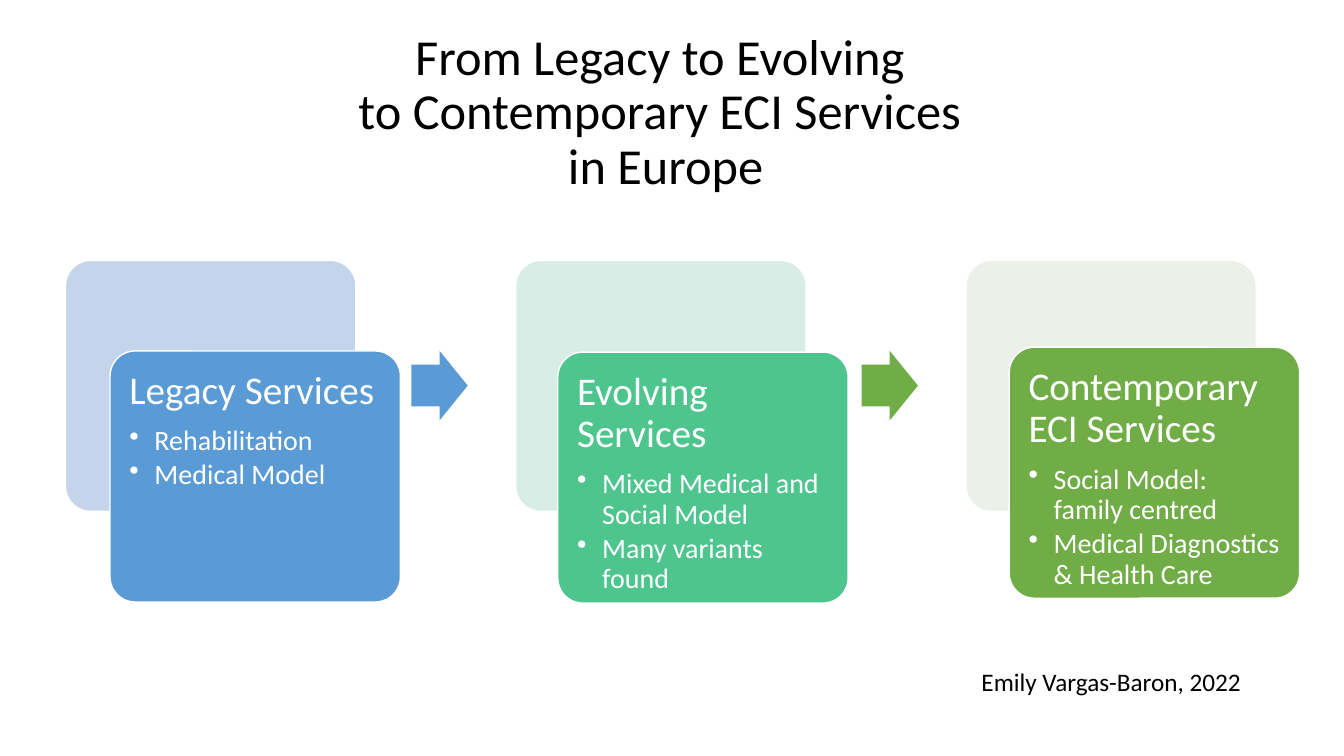
from dataclasses import dataclass

from lxml import etree
from pptx import Presentation
from pptx.dml.color import RGBColor
from pptx.enum.shapes import MSO_SHAPE
from pptx.enum.text import MSO_ANCHOR, MSO_AUTO_SIZE, PP_ALIGN
from pptx.oxml.ns import qn
from pptx.util import Pt

ROUNDED = MSO_SHAPE.ROUNDED_RECTANGLE
ARROW = MSO_SHAPE.RIGHT_ARROW
LEFT, CENTER = PP_ALIGN.LEFT, PP_ALIGN.CENTER
TOP, MIDDLE = MSO_ANCHOR.TOP, MSO_ANCHOR.MIDDLE
NO_AUTOFIT = MSO_AUTO_SIZE.NONE
TITLE_ONLY = 5


@dataclass(frozen=True)
class Theme:
    font: str = "Calibri"
    title_size: int = 36
    heading_size: int = 28
    bullet_size: int = 20
    credit_size: int = 18
    ink: str = "000000"
    paper: str = "FFFFFF"
    blue: str = "5B9BD5"
    pale_blue: str = "C4D5EB"
    teal: str = "4DC58D"
    pale_teal: str = "D8EDE6"
    green: str = "70AD47"
    pale_green: str = "EBF1E9"


THEME = Theme()


@dataclass(frozen=True)
class Stage:
    heading: str
    points: tuple
    color: str
    backdrop: str
    card_left: float
    card_top: float


STAGES = (
    Stage("Legacy Services", ("Rehabilitation", "Medical Model"),
          THEME.blue, THEME.pale_blue, 78.6, 250.7),
    Stage("Evolving Services", ("Mixed Medical and Social Model", "Many variants found"),
          THEME.teal, THEME.pale_teal, 398.4, 251.5),
    Stage("Contemporary ECI Services",
          ("Social Model: family centred", "Medical Diagnostics & Health Care"),
          THEME.green, THEME.pale_green, 720.9, 248),
)
ARROW_COLORS = (THEME.blue, THEME.green)

STAGE_LEFT, STAGE_TOP, STAGE_PITCH = 46.8, 186, 321.6
CARD_SIZE = (207.4, 179.3)
ARROW_OFFSET, ARROW_TOP, ARROW_SIZE = 247, 250.6, (40.3, 49.7)
CARD_INSET = 8.5
BULLET_INDENT = 18


def write(paragraph, text, size, color, align=LEFT, spacing=1.0, after=0, bullet=False):
    paragraph.text = text
    if bullet:
        properties = paragraph._p.get_or_add_pPr()
        properties.set("marL", str(Pt(BULLET_INDENT)))
        properties.set("indent", str(-Pt(BULLET_INDENT)))
        etree.SubElement(properties, qn("a:buChar")).set("char", "•")
    paragraph.alignment = align
    paragraph.line_spacing = spacing
    paragraph.space_before = Pt(0)
    paragraph.space_after = Pt(after)
    for run in paragraph.runs:
        run.font.name = THEME.font
        run.font.size = Pt(size)
        run.font.color.rgb = RGBColor.from_string(color)


def place(shape, left, top, width, height):
    shape.left, shape.top = Pt(left), Pt(top)
    shape.width, shape.height = Pt(width), Pt(height)


def add_block(slide, kind, left, top, size, fill, adjustments, outline=None):
    block = slide.shapes.add_shape(kind, Pt(left), Pt(top), *map(Pt, size))
    block.shadow.inherit = False
    block.fill.solid()
    block.fill.fore_color.rgb = RGBColor.from_string(fill)
    for index, value in enumerate(adjustments):
        block.adjustments[index] = value
    if outline:
        block.line.color.rgb = RGBColor.from_string(outline)
        block.line.width = Pt(1)
    else:
        block.line.fill.background()
    return block


def add_title(slide, text):
    title = slide.shapes.title
    place(title, 8.6, 28.8, 933.8, 104.4)
    frame = title.text_frame
    frame.auto_size = NO_AUTOFIT
    frame.vertical_anchor = MIDDLE
    write(frame.paragraphs[0], text, size=THEME.title_size, color=THEME.ink,
          align=CENTER, spacing=0.9)


def add_stage(slide, stage, left):
    add_block(slide, ROUNDED, left, STAGE_TOP, CARD_SIZE, stage.backdrop, (0.1,), THEME.paper)
    card = add_block(slide, ROUNDED, stage.card_left, stage.card_top, CARD_SIZE,
                     stage.color, (0.1,), THEME.paper)
    frame = card.text_frame
    frame.word_wrap = True
    frame.vertical_anchor = TOP
    frame.margin_left = frame.margin_right = Pt(CARD_INSET)
    frame.margin_top = frame.margin_bottom = Pt(CARD_INSET)
    write(frame.paragraphs[0], stage.heading, size=THEME.heading_size, color=THEME.paper,
          spacing=0.9, after=9.8)
    for point in stage.points:
        paragraph = frame.add_paragraph()
        paragraph.level = 1
        write(paragraph, point, size=THEME.bullet_size, color=THEME.paper,
              spacing=0.9, after=3, bullet=True)


def add_credit(slide, text):
    credit = slide.shapes.add_textbox(Pt(694), Pt(472.3), Pt(247.7), Pt(29))
    credit.text_frame.word_wrap = True
    write(credit.text_frame.paragraphs[0], text, size=THEME.credit_size, color=THEME.ink)


def main():
    presentation = Presentation()
    presentation.slide_width, presentation.slide_height = Pt(960), Pt(540)
    slide = presentation.slides.add_slide(presentation.slide_layouts[TITLE_ONLY])
    add_title(slide, "From Legacy to Evolving \vto Contemporary ECI Services \vin Europe")
    for index, stage in enumerate(STAGES):
        add_stage(slide, stage, STAGE_LEFT + index * STAGE_PITCH)
    for index, color in enumerate(ARROW_COLORS):
        add_block(slide, ARROW, STAGE_LEFT + index * STAGE_PITCH + ARROW_OFFSET, ARROW_TOP,
                  ARROW_SIZE, color, (0.6, 0.5))
    add_credit(slide, "Emily Vargas-Baron, 2022")
    presentation.save("out.pptx")


if __name__ == "__main__":
    main()
